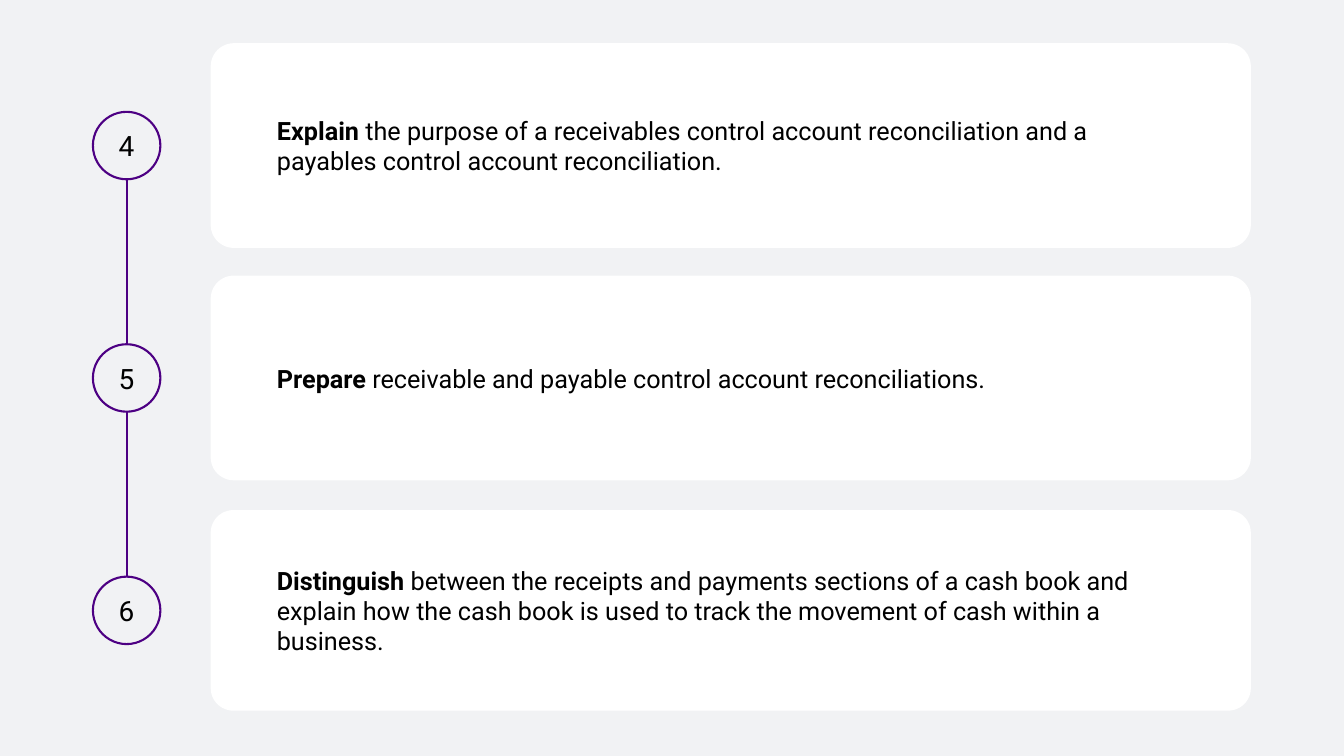
from lxml import etree
from pptx import Presentation
from pptx.dml.color import RGBColor
from pptx.enum import shapes, text
from pptx.oxml import ns
from pptx.util import Pt

OBJECTIVES = [
    # number, verb, rest of the sentence, card height
    ("4", "Explain", " the purpose of a receivables control account reconciliation "
     "and a payables control account reconciliation.", 146.2),
    ("5", "Prepare", " receivable and payable control account reconciliations.", 146.2),
    ("6", "Distinguish", " between the receipts and payments sections of a cash book and "
     "explain how the cash book is used to track the movement of cash within a business.", 143.3),
]

FONT = "Roboto"
GREY = RGBColor(0xF1, 0xF2, 0xF4)
PURPLE = RGBColor(0x4D, 0x00, 0x83)
WHITE = RGBColor(0xFF, 0xFF, 0xFF)
BLACK = RGBColor(0x00, 0x00, 0x00)

FIRST_CENTRE, STEP = 104, 166
TIMELINE_X, CIRCLE_SIZE = 90.5, 48.2
CARD_LEFT, CARD_WIDTH = 150.5, 743
CARD_ROUNDING, CARD_INSET = 0.113, 42.5
LINE_WIDTH = 1.5


def add_box(slide, kind, left, centre, width, height, fill, outline=None):
    """Add a filled shape centred vertically on the given height."""
    shape = slide.shapes.add_shape(
        kind, Pt(left), Pt(centre - height / 2), Pt(width), Pt(height))
    shape.shadow.inherit = False
    shape.fill.solid()
    shape.fill.fore_color.rgb = fill
    if outline is None:
        shape.line.fill.background()
    else:
        shape.line.color.rgb = outline
        shape.line.width = Pt(LINE_WIDTH)
    return shape


def write_text(shape, runs, size, align=text.PP_ALIGN.LEFT, inset=0):
    """Fill a shape with one paragraph of (wording, bold) runs."""
    frame = shape.text_frame
    frame.word_wrap = True
    frame.vertical_anchor = text.MSO_ANCHOR.MIDDLE
    frame.margin_left = frame.margin_right = Pt(inset)
    frame.margin_top = frame.margin_bottom = Pt(inset)
    paragraph = frame.paragraphs[0]
    paragraph.alignment = align
    for wording, bold in runs:
        run = paragraph.add_run()
        run.text = wording
        run.font.name = FONT
        run.font.size = Pt(size)
        run.font.bold = bold
        run.font.color.rgb = BLACK


def add_timeline(slide, top, bottom):
    line = slide.shapes.add_connector(
        shapes.MSO_CONNECTOR.STRAIGHT, Pt(TIMELINE_X), Pt(top), Pt(TIMELINE_X), Pt(bottom))
    line.line.color.rgb = PURPLE
    line.line.width = Pt(LINE_WIDTH)
    etree.SubElement(line._element.spPr, ns.qn("a:effectLst"))


def main():
    presentation = Presentation()
    presentation.slide_width, presentation.slide_height = Pt(960), Pt(540)
    slide = presentation.slides.add_slide(presentation.slide_layouts[6])
    slide.background.fill.solid()
    slide.background.fill.fore_color.rgb = GREY

    centres = [FIRST_CENTRE + STEP * i for i in range(len(OBJECTIVES))]
    add_timeline(slide, centres[0], centres[-1])
    for centre, (number, verb, rest, height) in zip(centres, OBJECTIVES):
        circle = add_box(slide, shapes.MSO_SHAPE.OVAL, TIMELINE_X - CIRCLE_SIZE / 2,
                         centre, CIRCLE_SIZE, CIRCLE_SIZE, GREY, outline=PURPLE)
        write_text(circle, [(number, False)], 20, align=text.PP_ALIGN.CENTER)
        card = add_box(slide, shapes.MSO_SHAPE.ROUNDED_RECTANGLE, CARD_LEFT,
                       centre, CARD_WIDTH, height, WHITE)
        card.adjustments[0] = CARD_ROUNDING
        write_text(card, [(verb, True), (rest, False)], 18, inset=CARD_INSET)

    presentation.save("out.pptx")


if __name__ == "__main__":
    main()
